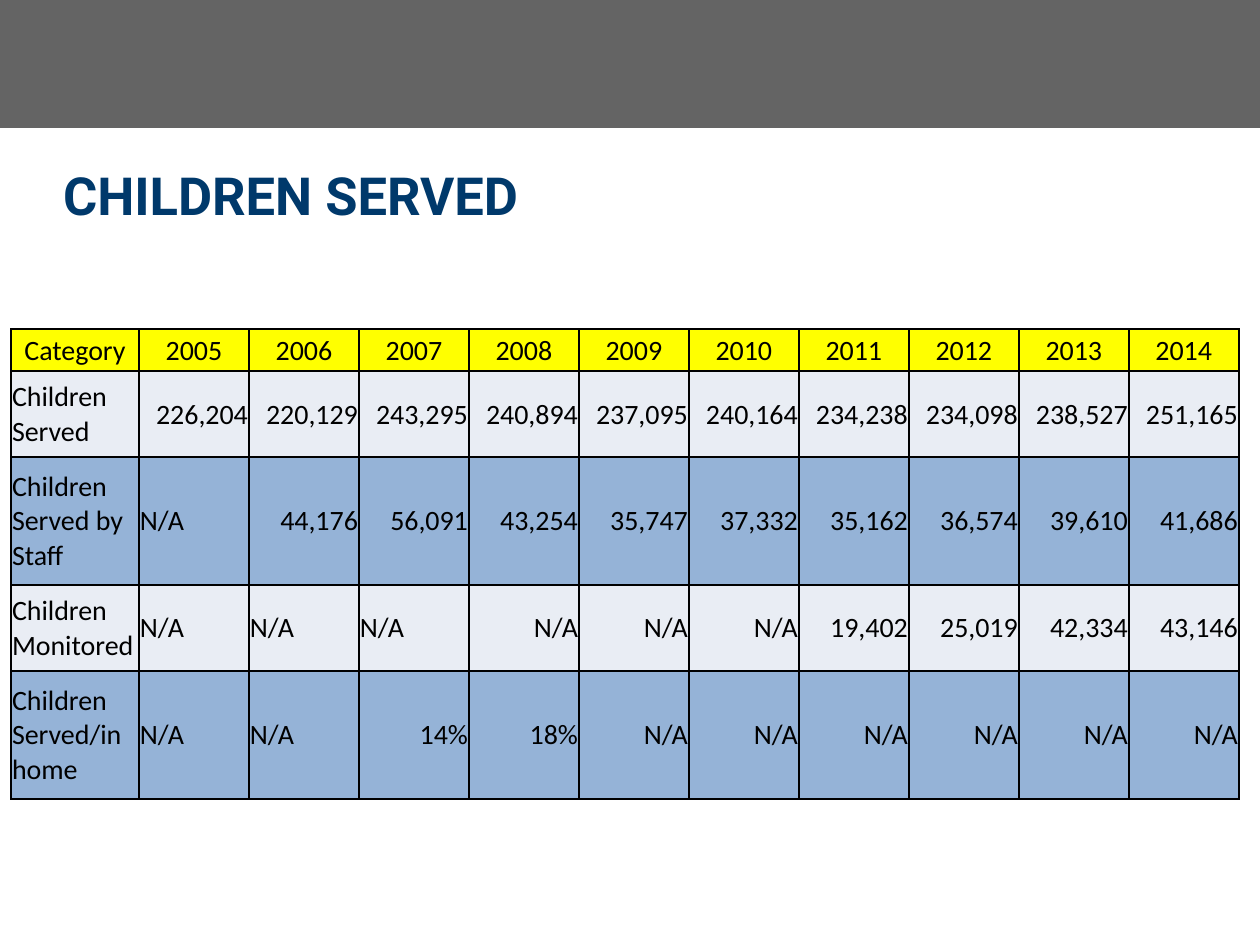
from dataclasses import dataclass

from lxml import etree
from pptx import Presentation
from pptx.dml.color import RGBColor
from pptx.enum.shapes import MSO_SHAPE
from pptx.enum.text import MSO_ANCHOR, MSO_AUTO_SIZE, PP_ALIGN
from pptx.oxml.ns import qn
from pptx.slide import Slide
from pptx.table import _Cell
from pptx.util import Emu, Pt

RECTANGLE = MSO_SHAPE.RECTANGLE
TOP, MIDDLE = MSO_ANCHOR.TOP, MSO_ANCHOR.MIDDLE
LEFT, CENTER, RIGHT = PP_ALIGN.LEFT, PP_ALIGN.CENTER, PP_ALIGN.RIGHT
NO_AUTO_SIZE = MSO_AUTO_SIZE.NONE

EMU_PER_PX = 914400 / 126
TITLE_ONLY_LAYOUT = 5
CATEGORY_WIDTH = 128
YEAR_WIDTH = 110
BORDER_TAGS = ("a:lnL", "a:lnR", "a:lnT", "a:lnB")

BLACK = RGBColor(0x00, 0x00, 0x00)
GRAY = RGBColor(0x64, 0x64, 0x64)
NAVY = RGBColor(0x00, 0x39, 0x6B)
YELLOW = RGBColor(0xFF, 0xFF, 0x00)
PALE = RGBColor(0xE9, 0xED, 0xF4)
BLUE = RGBColor(0x95, 0xB3, 0xD7)


@dataclass(frozen=True)
class TableRow:
    label: str
    values: list[str]
    height: int
    fill: RGBColor
    left_aligned_values: int = 0
    is_header: bool = False

    def alignment(self, column: int) -> PP_ALIGN:
        if self.is_header:
            return CENTER
        return LEFT if column <= self.left_aligned_values else RIGHT


ROWS = [
    TableRow("Category", [str(year) for year in range(2005, 2015)], 42, YELLOW, is_header=True),
    TableRow(
        "Children Served",
        ["226,204", "220,129", "243,295", "240,894", "237,095",
         "240,164", "234,238", "234,098", "238,527", "251,165"],
        86, PALE,
    ),
    TableRow(
        "Children Served by Staff",
        ["N/A", "44,176", "56,091", "43,254", "35,747",
         "37,332", "35,162", "36,574", "39,610", "41,686"],
        128, BLUE, left_aligned_values=1,
    ),
    TableRow(
        "Children Monitored",
        ["N/A"] * 6 + ["19,402", "25,019", "42,334", "43,146"],
        86, PALE, left_aligned_values=3,
    ),
    TableRow(
        "Children Served/in home",
        ["N/A"] * 2 + ["14%", "18%"] + ["N/A"] * 6,
        128, BLUE, left_aligned_values=2,
    ),
]


def px(value: int) -> Emu:
    return Emu(round(value * EMU_PER_PX))


def add_band(slide: Slide) -> None:
    band = slide.shapes.add_shape(RECTANGLE, 0, 0, px(1262), px(128))
    band.shadow.inherit = False
    band.fill.solid()
    band.fill.fore_color.rgb = GRAY
    band.line.fill.background()


def set_title(slide: Slide, text: str) -> None:
    title = slide.shapes.title
    title.left, title.top, title.width, title.height = px(63), px(163), px(1134), px(105)
    frame = title.text_frame
    frame.text = text
    frame.auto_size = NO_AUTO_SIZE
    frame.vertical_anchor = TOP
    frame.margin_left = frame.margin_right = frame.margin_top = frame.margin_bottom = 0
    paragraph = frame.paragraphs[0]
    paragraph.alignment = LEFT
    paragraph.font.name = "Roboto"
    paragraph.font.size = Pt(30)
    paragraph.font.bold = True
    paragraph.font.color.rgb = NAVY


def add_borders(cell: _Cell) -> None:
    properties = cell._tc.get_or_add_tcPr()
    for position, tag in enumerate(BORDER_TAGS):
        border = etree.Element(qn(tag), w=str(Pt(1)))
        fill = etree.SubElement(border, qn("a:solidFill"))
        etree.SubElement(fill, qn("a:srgbClr"), val=str(BLACK))
        properties.insert(position, border)


def fill_cell(cell: _Cell, text: str, fill: RGBColor, alignment: PP_ALIGN) -> None:
    cell.text = text
    cell.vertical_anchor = MIDDLE
    cell.margin_left = cell.margin_right = cell.margin_top = px(1)
    cell.margin_bottom = 0
    cell.fill.solid()
    cell.fill.fore_color.rgb = fill
    add_borders(cell)
    paragraph = cell.text_frame.paragraphs[0]
    paragraph.alignment = alignment
    paragraph.font.name = "Calibri"
    paragraph.font.size = Pt(16)
    paragraph.font.bold = False
    paragraph.font.color.rgb = BLACK


def add_children_table(slide: Slide, rows: list[TableRow]) -> None:
    year_count = len(rows[0].values)
    width = CATEGORY_WIDTH + year_count * YEAR_WIDTH
    height = sum(row.height for row in rows)
    table = slide.shapes.add_table(
        len(rows), year_count + 1, px(11), px(329), px(width), px(height)
    ).table
    for index, column in enumerate(table.columns):
        column.width = px(YEAR_WIDTH if index else CATEGORY_WIDTH)
    for row_index, row in enumerate(rows):
        table.rows[row_index].height = px(row.height)
        for column_index, text in enumerate([row.label, *row.values]):
            alignment = row.alignment(column_index)
            fill_cell(table.cell(row_index, column_index), text, row.fill, alignment)


def main() -> None:
    presentation = Presentation()
    presentation.slide_width = px(1260)
    presentation.slide_height = px(945)
    slide = presentation.slides.add_slide(presentation.slide_layouts[TITLE_ONLY_LAYOUT])
    add_band(slide)
    set_title(slide, "CHILDREN SERVED")
    add_children_table(slide, ROWS)
    presentation.save("out.pptx")


if __name__ == "__main__":
    main()
